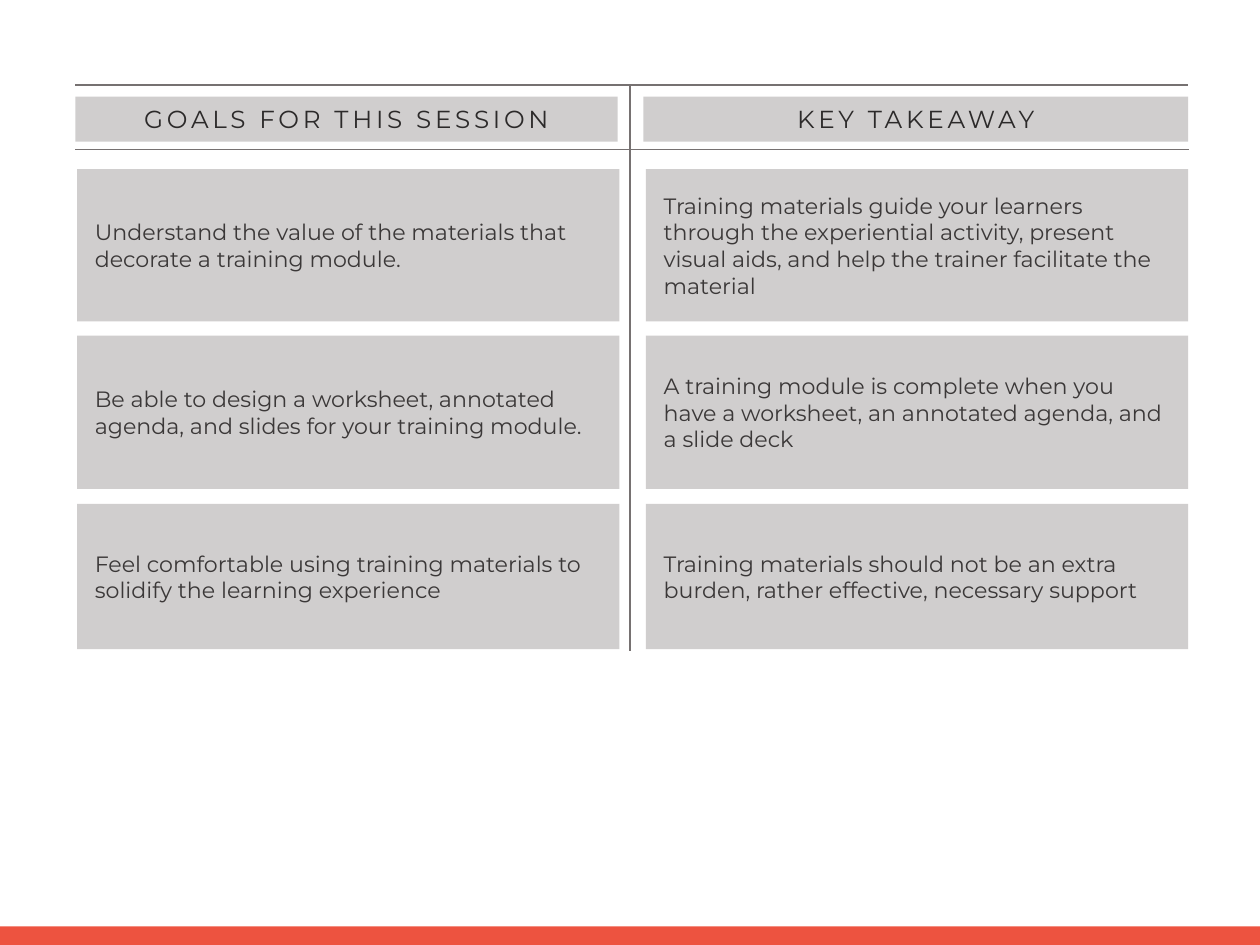
from lxml import etree
from pptx import Presentation
from pptx.dml.color import RGBColor
from pptx.enum import shapes, text
from pptx.oxml.ns import qn
from pptx.util import Inches, Pt

FONT = "Montserrat"
PANEL, RULE, ACCENT = "D0CECE", "767171", "ED5340"
HEADING_INK, BODY_INK = "2C2A2A", "3B3838"

# Each column: heading, heading left and width, cell left, cell texts
COLUMNS = [
    ("GOALS FOR THIS SESSION", 0.85, 6.12, 0.87, [
        "Understand the value of the materials that decorate a training module.",
        "Be able to design a worksheet, annotated agenda, and slides for your "
        "training module.",
        "Feel comfortable using training materials to solidify the learning "
        "experience",
    ]),
    ("KEY TAKEAWAY", 7.26, 6.15, 7.29, [
        "Training materials guide your learners through the experiential "
        "activity, present visual aids, and help the trainer facilitate the "
        "material",
        "A training module is complete when you have a worksheet, an annotated "
        "agenda, and a slide deck",
        "Training materials should not be an extra burden, rather effective, "
        "necessary support",
    ]),
]
CELL_WIDTH = 6.12
ROWS = [(1.91, 1.72), (3.79, 1.73), (5.69, 1.64)]  # top, height


def color(hex_value):
    return RGBColor.from_string(hex_value)


def add_panel(slide, left, top, width, height, fill=PANEL):
    panel = slide.shapes.add_shape(
        shapes.MSO_SHAPE.RECTANGLE,
        Inches(left), Inches(top), Inches(width), Inches(height))
    panel.shadow.inherit = False
    panel.fill.solid()
    panel.fill.fore_color.rgb = color(fill)
    panel.line.fill.background()
    return panel


def write(panel, words, size=18, ink=BODY_INK, align=text.PP_ALIGN.LEFT,
          side_inset=0.2, inset=0.1, spacing=None):
    frame = panel.text_frame
    frame.word_wrap = True
    frame.vertical_anchor = text.MSO_ANCHOR.MIDDLE
    frame.margin_left = frame.margin_right = Inches(side_inset)
    frame.margin_top = frame.margin_bottom = Inches(inset)
    paragraph = frame.paragraphs[0]
    paragraph.alignment = align
    run = paragraph.add_run()
    run.text = words
    run.font.name = FONT
    run.font.size = Pt(size)
    run.font.color.rgb = color(ink)
    if spacing:
        run.font._element.set("spc", str(spacing * 100))


def add_rule(slide, x1, y1, x2, y2):
    rule = slide.shapes.add_connector(
        shapes.MSO_CONNECTOR.STRAIGHT,
        Inches(x1), Inches(y1), Inches(x2), Inches(y2))
    rule.line.color.rgb = color(RULE)
    rule.line.width = Pt(1)
    etree.SubElement(rule._element.spPr, qn("a:effectLst"))


def add_column(slide, heading, heading_left, heading_width, cell_left, cells):
    header = add_panel(slide, heading_left, 1.09, heading_width, 0.51)
    write(header, heading, size=20, ink=HEADING_INK, spacing=3,
          align=text.PP_ALIGN.CENTER, side_inset=0.1, inset=0.05)
    for (top, height), words in zip(ROWS, cells):
        write(add_panel(slide, cell_left, top, CELL_WIDTH, height), words)


def main():
    deck = Presentation()
    deck.slide_width, deck.slide_height = Inches(14.22), Inches(10.67)
    slide = deck.slides.add_slide(deck.slide_layouts[6])

    # Bottom band
    add_panel(slide, 0, 10.46, 14.22, 0.21, fill=ACCENT)

    # Goals and takeaways
    for column in COLUMNS:
        add_column(slide, *column)

    # Rules around the headings and between the columns
    add_rule(slide, 0.85, 0.96, 13.41, 0.96)
    add_rule(slide, 0.85, 1.69, 13.42, 1.69)
    add_rule(slide, 7.11, 0.96, 7.11, 7.35)

    deck.save("out.pptx")


if __name__ == "__main__":
    main()
